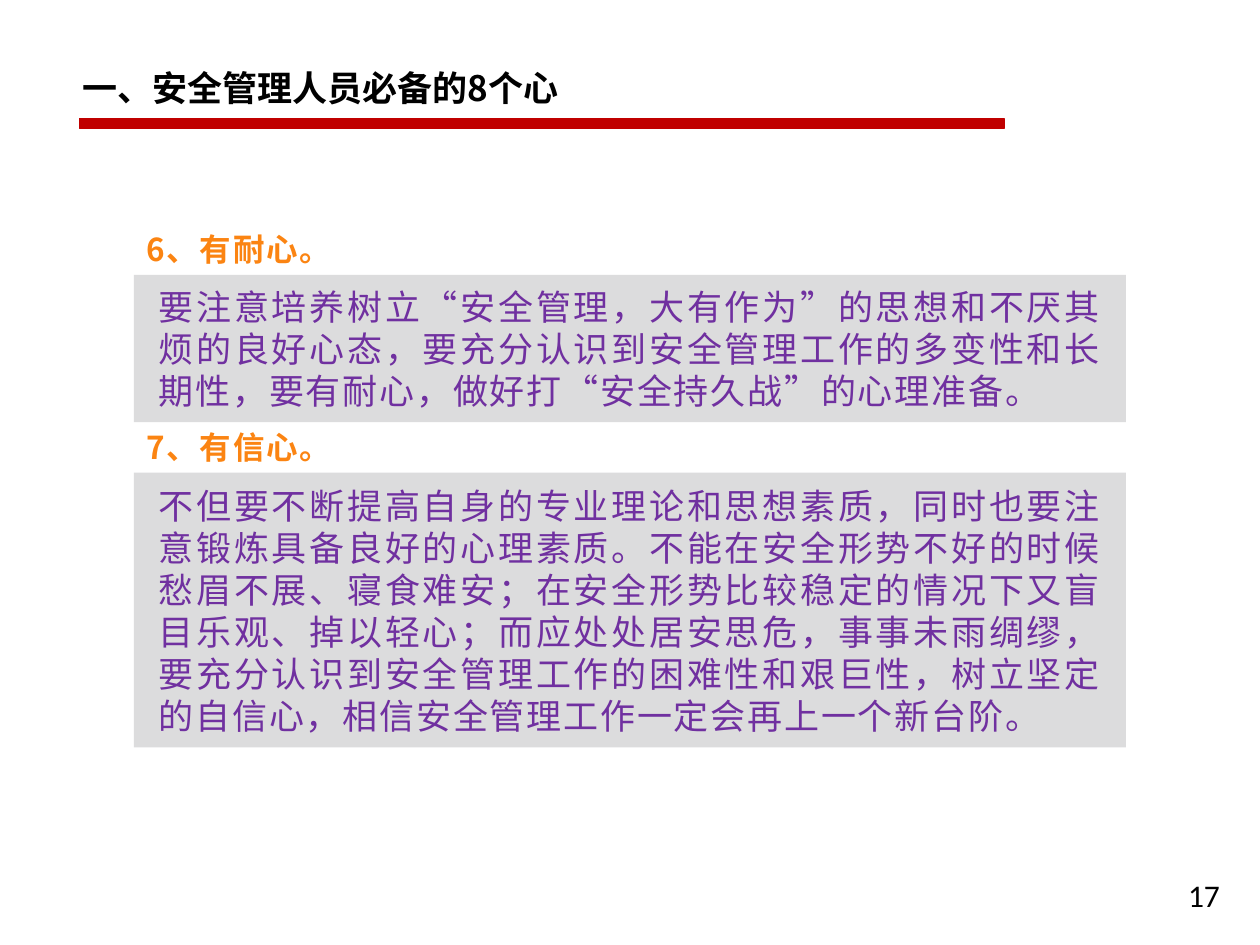
"""Build the slide on patience and confidence in safety management."""
import pptx
import pptx.dml.color
import pptx.enum.shapes
import pptx.enum.text
import pptx.oxml.ns
import pptx.util
from lxml import etree

Cm = pptx.util.Cm
Pt = pptx.util.Pt
ANCHOR = pptx.enum.text.MSO_ANCHOR
ALIGN = pptx.enum.text.PP_ALIGN
CJK_FONT = "Noto Sans CJK SC"


def color(value):
    return pptx.dml.color.RGBColor.from_string(value)


def add_span(para, text, size, fill, font=CJK_FONT, bold=False, spacing=0):
    span = para.add_run()
    span.text = text
    span.font.size = Pt(size)
    span.font.bold = bold
    span.font.name = font
    span.font.color.rgb = color(fill)
    properties = span.font._element
    etree.SubElement(properties, pptx.oxml.ns.qn("a:ea"), typeface=font)
    if spacing:
        properties.set("spc", str(spacing * 100))


deck = pptx.Presentation()
deck.slide_width = Cm(25.4)
deck.slide_height = Cm(19.05)
page = deck.slides.add_slide(deck.slide_layouts[5])

rule = page.shapes.add_shape(
    pptx.enum.shapes.MSO_SHAPE.RECTANGLE, Cm(1.6), Cm(2.39), Cm(18.64), Cm(0.2))
rule.shadow.inherit = False
rule.fill.solid()
rule.fill.fore_color.rgb = color("C00000")
rule.line.color.rgb = color("C00000")
rule.line.width = Pt(0.75)

title = page.shapes.title
title.left, title.top, title.width, title.height = Cm(1.4), Cm(0.79), Cm(14.66), Cm(1.4)
title.text_frame.word_wrap = True
title.text_frame.auto_size = pptx.enum.text.MSO_AUTO_SIZE.NONE
title.text_frame.vertical_anchor = ANCHOR.TOP
para = title.text_frame.paragraphs[0]
para.alignment = ALIGN.LEFT
para.line_spacing = 1.5
para.space_before = Pt(4)
add_span(para, "一、安全管理人员必备的8个心", 20, "000000", bold=True)

sections = [
    ("6、有耐心。", 4.52, 2.97,
     "要注意培养树立“安全管理，大有作为”的思想和不厌其烦的良好心态，"
     "要充分认识到安全管理工作的多变性和长期性，要有耐心，"
     "做好打“安全持久战”的心理准备。"),
    ("7、有信心。", 8.51, 5.54,
     "不但要不断提高自身的专业理论和思想素质，同时也要注意锻炼具备良好的心理素质。"
     "不能在安全形势不好的时候愁眉不展、寝食难安；"
     "在安全形势比较稳定的情况下又盲目乐观、掉以轻心；"
     "而应处处居安思危，事事未雨绸缪，要充分认识到安全管理工作的困难性和艰巨性，"
     "树立坚定的自信心，相信安全管理工作一定会再上一个新台阶。"),
]
heading_height = 1.02
group = page.shapes.add_group_shape()
for heading, top, height, body in sections:
    label = group.shapes.add_textbox(Cm(2.7), Cm(top), Cm(4.32), Cm(heading_height))
    label.text_frame.word_wrap = False
    add_span(label.text_frame.paragraphs[0], heading, 18, "FB8412", bold=True, spacing=1)

    box = group.shapes.add_shape(
        pptx.enum.shapes.MSO_SHAPE.RECTANGLE,
        Cm(2.7), Cm(top + heading_height), Cm(20), Cm(height))
    box.shadow.inherit = False
    box.fill.solid()
    box.fill.fore_color.rgb = color("DCDCDD")
    box.line.fill.background()
    frame = box.text_frame
    frame.word_wrap = True
    frame.vertical_anchor = ANCHOR.MIDDLE
    frame.margin_left = frame.margin_right = Cm(0.5)
    frame.margin_top = frame.margin_bottom = Cm(0.2)
    para = frame.paragraphs[0]
    para.alignment = ALIGN.JUSTIFY
    add_span(para, body, 20, "7030A0", spacing=1)

number = page.shapes.add_textbox(Cm(23.7), Cm(17.53), Cm(1.6), Cm(1.02))
number.text_frame.word_wrap = True
add_span(number.text_frame.paragraphs[0], "17", 18, "000000", font="Calibri")

deck.save("out.pptx")
